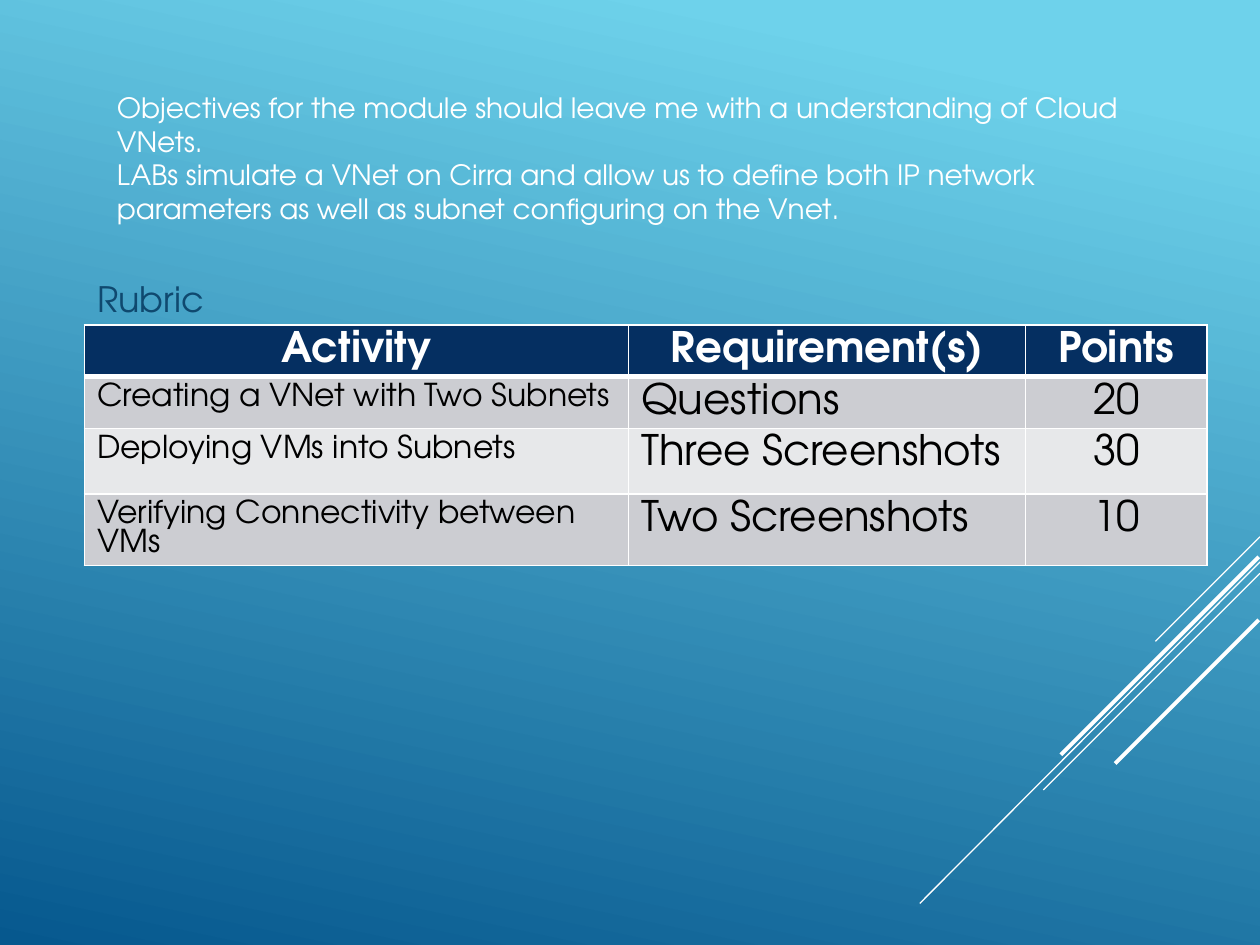
from dataclasses import dataclass

from lxml import etree
from pptx import Presentation
from pptx.dml.color import RGBColor
from pptx.enum.shapes import MSO_CONNECTOR
from pptx.enum.text import MSO_ANCHOR, MSO_AUTO_SIZE, PP_ALIGN
from pptx.oxml.ns import qn
from pptx.util import Inches, Pt

STRAIGHT = MSO_CONNECTOR.STRAIGHT
TOP = MSO_ANCHOR.TOP
LEFT, CENTER = PP_ALIGN.LEFT, PP_ALIGN.CENTER
FIT_SHAPE, FIT_NONE = MSO_AUTO_SIZE.SHAPE_TO_FIT_TEXT, MSO_AUTO_SIZE.NONE


@dataclass(frozen=True)
class Theme:
    """Colours, font and type sizes of the slide."""
    font: str = "TeX Gyre Adventor"
    sky: str = "6ED2EB"
    deep: str = "06588E"
    white: str = "FFFFFF"
    black: str = "000000"
    heading: str = "0F496F"
    header_fill: str = "052F61"
    bands: tuple = ("CCCDD2", "E7E8EA")
    objective_size: int = 16
    activity_size: int = 18
    heading_size: int = 20
    table_size: int = 24


THEME = Theme()

STREAKS = [
    ((10, 4.26), (9.17, 5.09), 0.75),
    ((10, 4.46), (7.3, 7.17), 0.75),
    ((10, 4.55), (8.28, 6.27), 0.75),
    ((9.99, 4.42), (8.42, 5.99), 2.25),
    ((9.99, 4.92), (8.85, 6.06), 2.25),
]
OBJECTIVES = [
    "Objectives for the module should leave me with a understanding of Cloud VNets.",
    "LABs simulate a VNet on Cirra and allow us to define both IP network "
    "parameters as well as subnet configuring on the Vnet.",
]
RUBRIC = [
    ("Activity", "Requirement(s)", "Points"),
    ("Creating a VNet with Two Subnets", "Questions", "20"),
    ("Deploying VMs into Subnets", "Three Screenshots", "30"),
    ("Verifying Connectivity between VMs", "Two Screenshots", "10"),
]
COLUMN_WIDTHS = (4.32, 3.15, 1.44)
ROW_HEIGHTS = (0.41, 0.41, 0.52, 0.41)


def style_paragraph(paragraph, size, color, bold=False, align=LEFT):
    """Set the font and alignment of a paragraph."""
    paragraph.alignment = align
    paragraph.font.name = THEME.font
    paragraph.font.size = Pt(size)
    paragraph.font.bold = bold
    paragraph.font.color.rgb = RGBColor.from_string(color)


def paint_background(slide):
    """Fill the background with the sky gradient."""
    fill = slide.background.fill
    fill.gradient()
    fill.gradient_angle = 360 - 102
    stops = ((0.1, THEME.sky), (1, THEME.deep))
    for stop, (position, color) in zip(fill.gradient_stops, stops):
        stop.position = position
        stop.color.rgb = RGBColor.from_string(color)


def add_streak(slide, start, end, width):
    """Draw one white diagonal line."""
    points = [Inches(value) for value in (*start, *end)]
    streak = slide.shapes.add_connector(STRAIGHT, *points)
    streak.line.color.rgb = RGBColor.from_string(THEME.white)
    streak.line.width = Pt(width)
    etree.SubElement(streak._element.spPr, qn("a:effectLst"))


def place_heading(slide):
    """Put the rubric heading in the body placeholder."""
    title = slide.shapes.title
    title._element.getparent().remove(title._element)
    heading = slide.placeholders[1]
    heading.left, heading.top = Inches(0.67), Inches(2.17)
    heading.width, heading.height = Inches(9), Inches(1.28)
    frame = heading.text_frame
    frame.text = "Rubric"
    frame.vertical_anchor = TOP
    frame.margin_top = Inches(0.03)
    frame.auto_size = FIT_NONE
    paragraph = frame.paragraphs[0]
    style_paragraph(paragraph, THEME.heading_size, THEME.heading)
    paragraph.space_before = Pt(0)
    paragraph.space_after = Pt(6)
    properties = paragraph._p.get_or_add_pPr()
    properties.set("marL", str(Inches(0.31)))
    properties.set("indent", str(-Inches(0.31)))
    bullet = etree.Element(qn("a:buNone"))
    properties.find(qn("a:defRPr")).addprevious(bullet)


def set_border(cell, side, width):
    """Add a white border to one side of a cell."""
    border = etree.SubElement(cell._tc.get_or_add_tcPr(), qn(f"a:ln{side}"), w=str(Pt(width)))
    fill = etree.SubElement(border, qn("a:solidFill"))
    etree.SubElement(fill, qn("a:srgbClr"), val=THEME.white)


def fill_cell(cell, text, row, column):
    """Write and format one rubric cell."""
    header = row == 0
    for side in "LRTB":
        thick = (header and side == "B") or (row == 1 and side == "T")
        set_border(cell, side, 3 if thick else 1)
    cell.fill.solid()
    color = THEME.header_fill if header else THEME.bands[(row - 1) % 2]
    cell.fill.fore_color.rgb = RGBColor.from_string(color)
    cell.text = text
    paragraph = cell.text_frame.paragraphs[0]
    size = THEME.activity_size if column == 0 and not header else THEME.table_size
    align = CENTER if header or column == 2 else LEFT
    style_paragraph(paragraph, size, THEME.white if header else THEME.black, header, align)


def add_rubric(slide):
    """Build the rubric table."""
    frame = slide.shapes.add_table(
        len(RUBRIC), len(COLUMN_WIDTHS), Inches(0.67), Inches(2.58),
        Inches(sum(COLUMN_WIDTHS)), Inches(sum(ROW_HEIGHTS)))
    table = frame.table
    for column, width in zip(table.columns, COLUMN_WIDTHS):
        column.width = Inches(width)
    for row, height in zip(table.rows, ROW_HEIGHTS):
        row.height = Inches(height)
    for row, texts in enumerate(RUBRIC):
        for column, text in enumerate(texts):
            fill_cell(table.cell(row, column), text, row, column)


def add_objectives(slide):
    """Add the text box with the module objectives."""
    box = slide.shapes.add_textbox(Inches(0.83), Inches(0.67), Inches(8.33), Inches(1.18))
    frame = box.text_frame
    frame.word_wrap = True
    frame.auto_size = FIT_SHAPE
    frame.text = "\n".join(OBJECTIVES)
    for paragraph in frame.paragraphs:
        style_paragraph(paragraph, THEME.objective_size, THEME.white)


def main():
    """Build and save the slide."""
    presentation = Presentation()
    presentation.slide_width, presentation.slide_height = Inches(10), Inches(7.5)
    slide = presentation.slides.add_slide(presentation.slide_layouts[1])
    paint_background(slide)
    for start, end, width in STREAKS:
        add_streak(slide, start, end, width)
    place_heading(slide)
    add_rubric(slide)
    add_objectives(slide)
    presentation.save("out.pptx")


if __name__ == "__main__":
    main()
